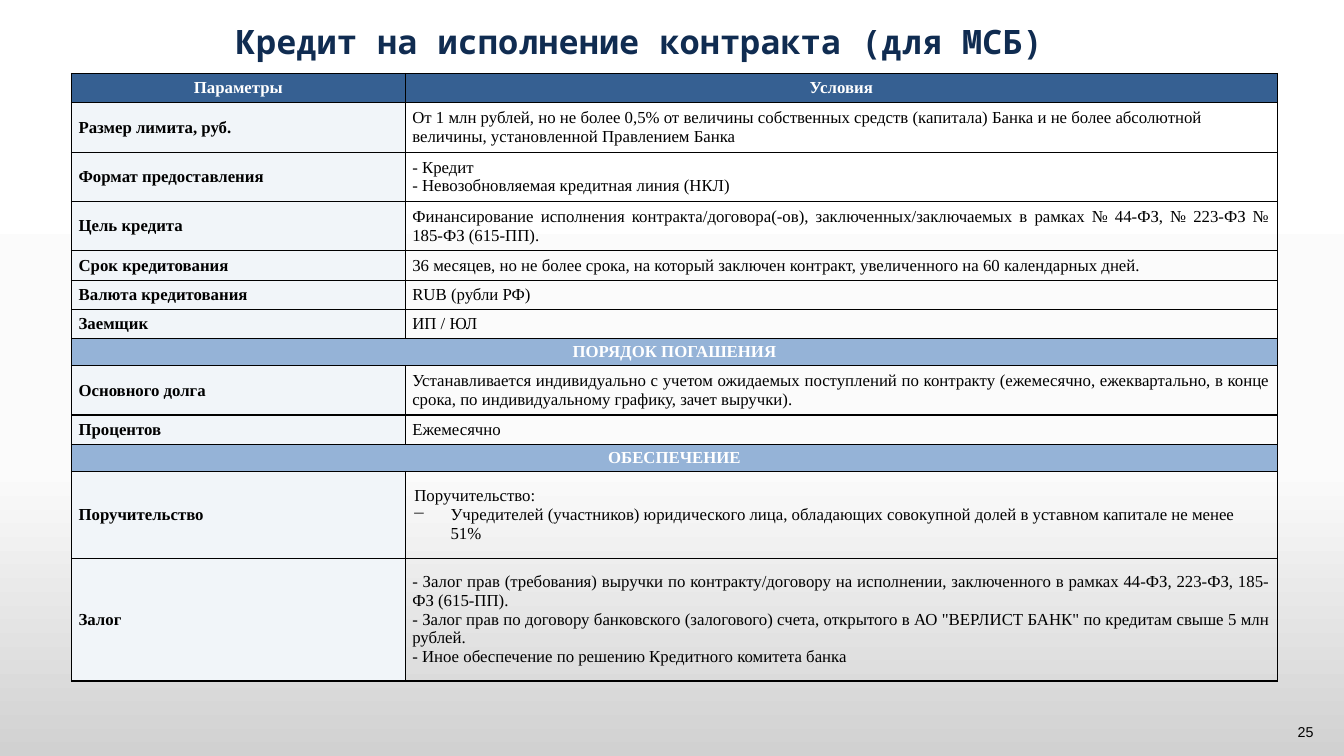
import copy
import lxml.etree
import pptx
import pptx.dml.color
import pptx.enum.text
import pptx.oxml.ns
import pptx.util

Inches, Pt = pptx.util.Inches, pptx.util.Pt
PP_ALIGN = pptx.enum.text.PP_ALIGN
RGB = pptx.dml.color.RGBColor.from_string
qn = pptx.oxml.ns.qn

COLORS = {
    "title": "102C51", "text": "000000", "light": "FFFFFF",
    "header": "366092", "section": "95B3D7", "label": "F1F5F9",
}
BACKGROUND = [(0, "FFFFFF"), (0.62, "FBFBFB"), (1, "D1D1D1")]
COLUMNS = [3.31, 8.65]
ONE_LINE, TWO_LINES, SECTION = 0.29, 0.49, 0.27
LEFT, CENTER, JUSTIFY = PP_ALIGN.LEFT, PP_ALIGN.CENTER, PP_ALIGN.JUSTIFY

# height, label, alignment of the terms, terms; a section has no terms
ROWS = [
    (ONE_LINE, "Параметры", CENTER, ["Условия"]),
    (TWO_LINES, "Размер лимита, руб.", LEFT, [
        "От 1 млн рублей, но не более 0,5% от величины собственных средств (капитала) Банка "
        "и не более абсолютной величины, установленной Правлением Банка"]),
    (TWO_LINES, "Формат предоставления", JUSTIFY, [
        "- Кредит", "- Невозобновляемая кредитная линия (НКЛ)"]),
    (TWO_LINES, "Цель кредита", JUSTIFY, [
        "Финансирование исполнения контракта/договора(-ов), заключенных/заключаемых "
        "в рамках № 44-ФЗ, № 223-ФЗ № 185-ФЗ (615-ПП)."]),
    (ONE_LINE, "Срок кредитования", JUSTIFY, [
        "36 месяцев, но не более срока, на который заключен контракт, "
        "увеличенного на 60 календарных дней."]),
    (ONE_LINE, "Валюта кредитования", LEFT, ["RUB (рубли РФ)"]),
    (ONE_LINE, "Заемщик", LEFT, ["ИП / ЮЛ"]),
    (SECTION, "ПОРЯДОК ПОГАШЕНИЯ", CENTER, []),
    (TWO_LINES, "Основного долга", JUSTIFY, [
        "Устанавливается индивидуально с учетом ожидаемых поступлений по контракту (ежемесячно, "
        "ежеквартально, в конце срока, по индивидуальному графику, зачет выручки)."]),
    (ONE_LINE, "Процентов", LEFT, ["Ежемесячно"]),
    (SECTION, "ОБЕСПЕЧЕНИЕ", CENTER, []),
    (0.86, "Поручительство", LEFT, [
        "Поручительство:",
        "Учредителей (участников) юридического лица, обладающих совокупной долей "
        "в уставном капитале не менее 51%"]),
    (1.22, "Залог", JUSTIFY, [
        "- Залог прав (требования) выручки по контракту/договору на исполнении, "
        "заключенного в рамках 44-ФЗ, 223-ФЗ, 185-ФЗ (615-ПП).",
        "- Залог прав по договору банковского (залогового) счета, открытого в "
        "АО \"ВЕРЛИСТ БАНК\" по кредитам свыше 5 млн рублей.",
        "- Иное обеспечение по решению Кредитного комитета банка"]),
]


def write(tf, lines, font, size, color, bold=False, align=LEFT):
    tf.text = "\n".join(lines)
    for p in tf.paragraphs:
        p.alignment = align
        for r in p.runs:
            r.font.name, r.font.size, r.font.bold = font, Pt(size), bold
            r.font.color.rgb = RGB(color)


def fill_cell(cell, lines, fill, color, bold, align):
    """Border, fill and write one cell; fill None leaves it clear."""
    cell.margin_left = cell.margin_right = Inches(0.07)
    cell.margin_top = cell.margin_bottom = 0
    cell.vertical_anchor = pptx.enum.text.MSO_ANCHOR.MIDDLE
    tcPr = cell._tc.get_or_add_tcPr()
    for side in ("a:lnL", "a:lnR", "a:lnT", "a:lnB"):
        ln = lxml.etree.SubElement(tcPr, qn(side), w=str(Pt(1)))
        solid = lxml.etree.SubElement(ln, qn("a:solidFill"))
        lxml.etree.SubElement(solid, qn("a:srgbClr"), val=COLORS["text"])
    if fill:
        cell.fill.solid()
        cell.fill.fore_color.rgb = RGB(fill)
    else:
        cell.fill.background()
    write(cell.text_frame, lines, "Times New Roman", 12, color, bold, align)


prs = pptx.Presentation()
prs.slide_width, prs.slide_height = Inches(13.33), Inches(7.5)
s = prs.slides.add_slide(prs.slide_layouts[6])

# Background
bg = s.background.fill
bg.gradient()
bg.gradient_angle = 270
stops = next(s.element.iter(qn("a:gsLst")))
stops.append(copy.deepcopy(stops[-1]))
for stop, (position, color) in zip(bg.gradient_stops, BACKGROUND):
    stop.position = position
    stop.color.rgb = RGB(color)

# Title and page number
for box, text, font, size, color, bold in [
    ((2.34, 0.21, 9.47, 0.4), "Кредит на исполнение контракта (для МСБ)",
     "Noto Sans Mono", 24, COLORS["title"], True),
    ((12.87, 7.18, 0.29, 0.17), "25", "Arial", 10.2, COLORS["text"], False),
]:
    tf = s.shapes.add_textbox(*map(Inches, box)).text_frame
    tf.margin_left = tf.margin_top = tf.margin_right = tf.margin_bottom = 0
    tf.word_wrap = bold
    write(tf, [text], font, size, color, bold)

# Table of loan terms
height = sum(row[0] for row in ROWS)
table = s.shapes.add_table(len(ROWS), 2, Inches(0.71), Inches(0.73),
                           Inches(sum(COLUMNS)), Inches(height)).table
table.first_row = table.horz_banding = False
for column, width in zip(table.columns, COLUMNS):
    column.width = Inches(width)

for i, (row_height, label, align, terms) in enumerate(ROWS):
    table.rows[i].height = Inches(row_height)
    name, value = table.cell(i, 0), table.cell(i, 1)
    if i == 0:
        fill_cell(name, [label], COLORS["header"], COLORS["light"], True, CENTER)
        fill_cell(value, terms, COLORS["header"], COLORS["light"], True, CENTER)
    elif terms:
        fill_cell(name, [label], COLORS["label"], COLORS["text"], True, LEFT)
        fill_cell(value, terms, None, COLORS["text"], False, align)
    else:
        fill_cell(value, [], COLORS["section"], COLORS["light"], True, CENTER)
        name.merge(value)
        fill_cell(name, [label], COLORS["section"], COLORS["light"], True, CENTER)

    if label == "Поручительство":
        intro, item = value.text_frame.paragraphs
        intro._p.get_or_add_pPr().set("marL", str(Inches(0.02)))
        pPr = item._p.get_or_add_pPr()
        pPr.set("marL", str(Inches(0.38)))
        pPr.set("indent", str(-Inches(0.38)))
        lxml.etree.SubElement(pPr, qn("a:buChar"), char="−")
        for p in (intro, item):
            tabs = lxml.etree.SubElement(p._p.get_or_add_pPr(), qn("a:tabLst"))
            lxml.etree.SubElement(tabs, qn("a:tab"), pos=str(Inches(0.12)), algn="l")

prs.save("out.pptx")
